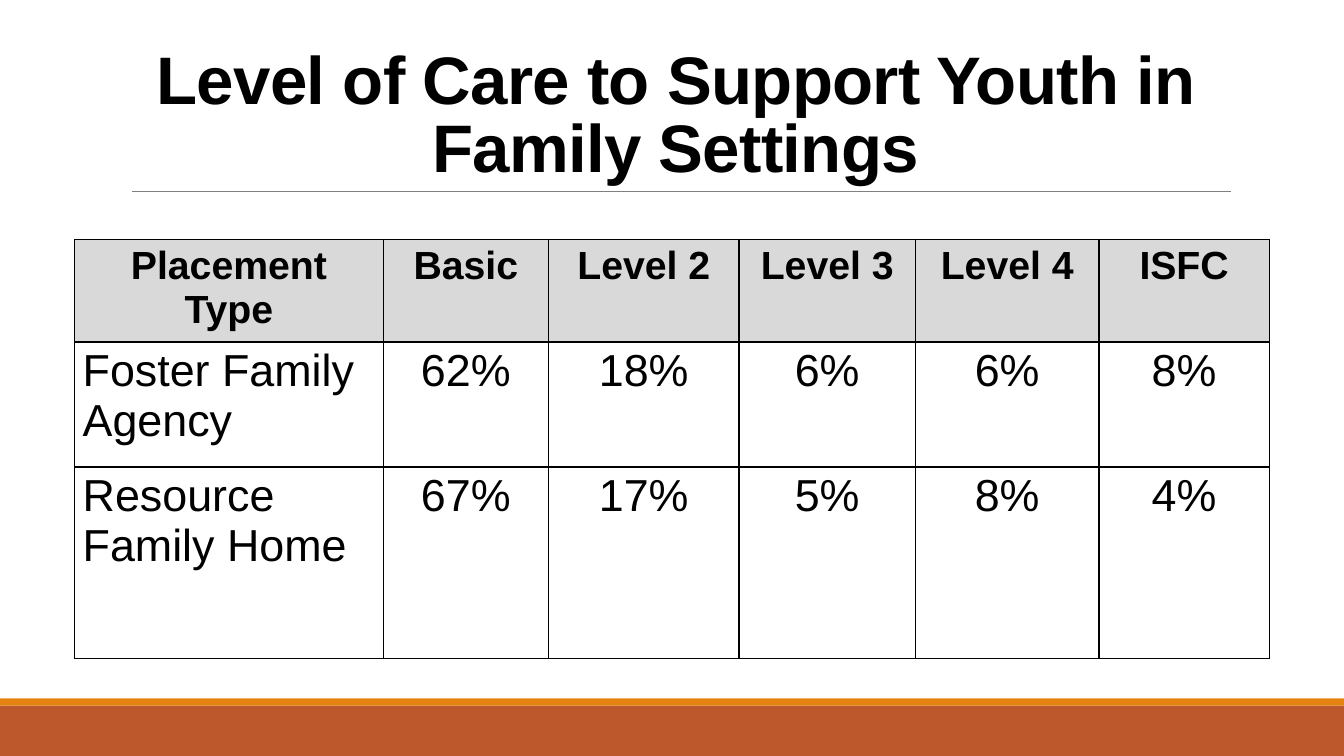
from lxml import etree
from pptx import Presentation, util as u
from pptx.dml.color import RGBColor
from pptx.enum import shapes, text
from pptx.oxml.ns import qn

WIDTH, HEIGHT = 13.33, 7.5
FONT = "Arial"
BLACK, WHITE, HEADER_GREY = "000000", "FFFFFF", "D9D9D9"
COLUMN_WIDTHS = [3.06, 1.64, 1.89, 1.75, 1.82, 1.69]
ROW_HEIGHTS = [0.97, 1.24, 1.9]
PLACEMENTS = [
    ["Placement Type", "Basic", "Level 2", "Level 3", "Level 4", "ISFC"],
    ["Foster Family Agency", "62%", "18%", "6%", "6%", "8%"],
    ["Resource Family Home", "67%", "17%", "5%", "8%", "4%"],
]
CELL_FORMAT = {
    "margin_left": u.Inches(0.08),
    "margin_right": u.Inches(0.08),
    "margin_top": u.Inches(0.04),
    "margin_bottom": u.Inches(0.04),
    "vertical_anchor": text.MSO_ANCHOR.TOP,
}


def color(value):
    return RGBColor.from_string(value)


def apply(target, formats):
    for name, value in formats.items():
        setattr(target, name, value)


def paint(target, value):
    target.fill.solid()
    target.fill.fore_color.rgb = color(value)


def write(frame, wording, size, bold, alignment):
    paragraph = frame.paragraphs[0]
    paragraph.alignment = alignment
    run = paragraph.add_run()
    run.text = wording
    apply(run.font, {"name": FONT, "size": u.Pt(size), "bold": bold})
    run.font.color.rgb = color(BLACK)
    return paragraph, run


def add_band(slide, top, height, fill):
    band = slide.shapes.add_shape(
        shapes.MSO_SHAPE.RECTANGLE, 0, u.Inches(top), u.Inches(WIDTH), u.Inches(height))
    band.shadow.inherit = False
    paint(band, fill)
    band.line.fill.background()


def add_rule(slide, left, right, top):
    rule = slide.shapes.add_connector(
        shapes.MSO_CONNECTOR.STRAIGHT,
        u.Inches(left), u.Inches(top), u.Inches(right), u.Inches(top))
    rule.line.width = u.Pt(0.5)
    rule.line.color.rgb = color("808080")
    etree.SubElement(rule._element.spPr, qn("a:effectLst"))


def add_title(slide, wording):
    title = slide.shapes.add_textbox(
        u.Inches(1.2), u.Inches(0.31), u.Inches(11), u.Inches(1.59))
    apply(title.text_frame, {"word_wrap": True, "vertical_anchor": text.MSO_ANCHOR.BOTTOM})
    paragraph, run = write(title.text_frame, wording, 48, True, text.PP_ALIGN.CENTER)
    paragraph.line_spacing = 0.85
    run.font._element.set("spc", "-50")


def add_borders(cell):
    properties = cell._tc.get_or_add_tcPr()
    for position, side in enumerate(("lnL", "lnR", "lnT", "lnB")):
        border = etree.Element(qn(f"a:{side}"), w=str(u.Pt(1)))
        fill = etree.SubElement(border, qn("a:solidFill"))
        etree.SubElement(fill, qn("a:srgbClr"), val=BLACK)
        properties.insert(position, border)


def fill_cell(cell, wording, is_header, is_label):
    apply(cell, CELL_FORMAT)
    paint(cell, HEADER_GREY if is_header else WHITE)
    alignment = text.PP_ALIGN.LEFT if is_label else text.PP_ALIGN.CENTER
    write(cell.text_frame, wording, 28 if is_header else 32, is_header, alignment)
    add_borders(cell)


def add_placement_table(slide):
    placements = slide.shapes.add_table(
        len(ROW_HEIGHTS), len(COLUMN_WIDTHS), u.Inches(0.74), u.Inches(2.38),
        u.Inches(sum(COLUMN_WIDTHS)), u.Inches(sum(ROW_HEIGHTS))).table
    for column, width in zip(placements.columns, COLUMN_WIDTHS):
        column.width = u.Inches(width)
    for row, height in zip(placements.rows, ROW_HEIGHTS):
        row.height = u.Inches(height)
    for r, entries in enumerate(PLACEMENTS):
        for c, wording in enumerate(entries):
            fill_cell(placements.cell(r, c), wording, r == 0, r > 0 and c == 0)


def main():
    deck = Presentation()
    apply(deck, {"slide_width": u.Inches(WIDTH), "slide_height": u.Inches(HEIGHT)})
    slide = deck.slides.add_slide(deck.slide_layouts[6])
    add_band(slide, 7, 0.5, "BD582C")
    add_band(slide, 6.93, 0.07, "E48312")
    add_rule(slide, 1.31, 12.21, 1.9)
    add_title(slide, "Level of Care to Support Youth in Family Settings")
    add_placement_table(slide)
    deck.save("out.pptx")


if __name__ == "__main__":
    main()
